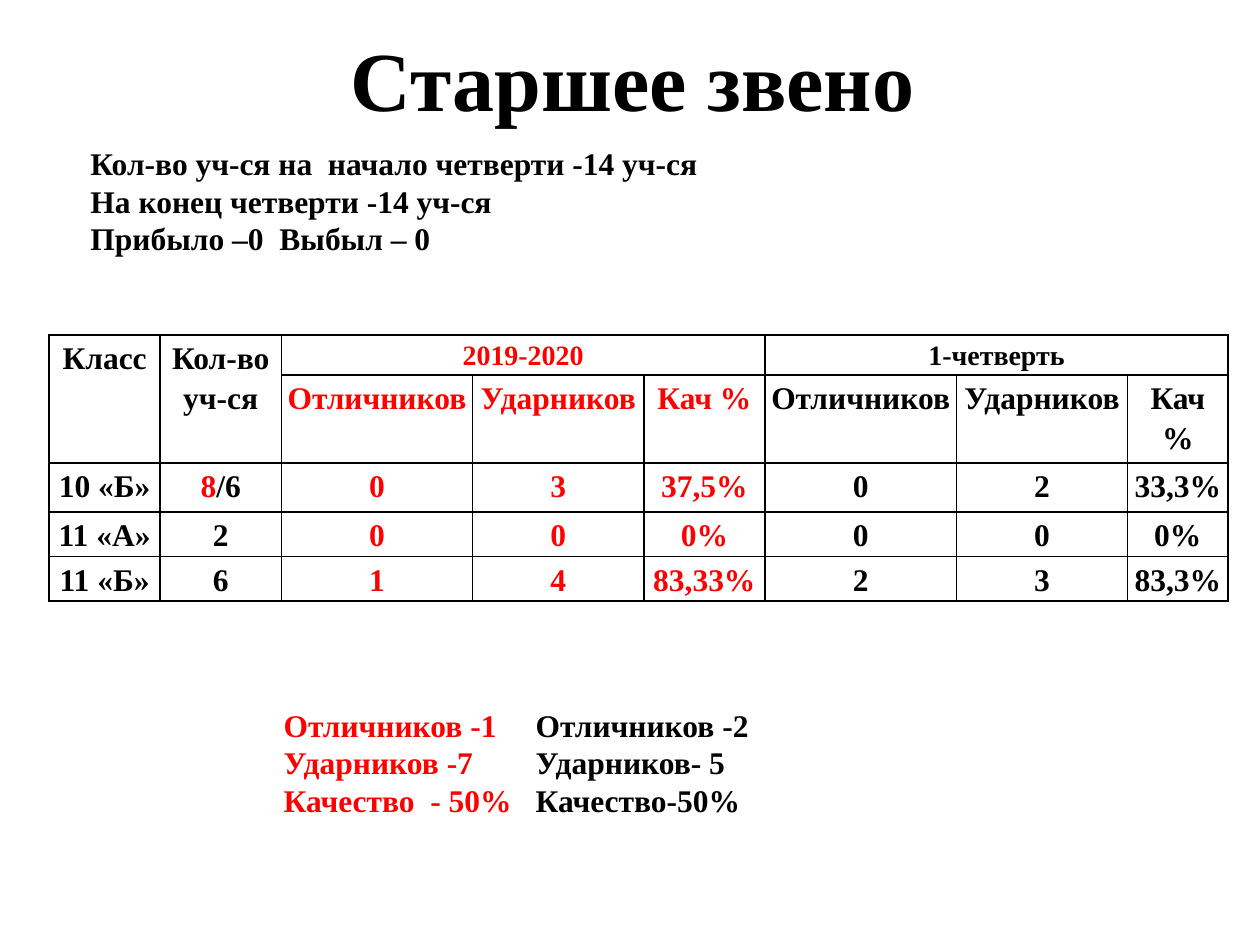
from lxml import etree
from pptx import Presentation
from pptx.dml.color import RGBColor
from pptx.enum.text import MSO_ANCHOR, MSO_AUTO_SIZE, PP_ALIGN
from pptx.oxml.ns import qn
from pptx.util import Cm, Pt

CENTER, LEFT = PP_ALIGN.CENTER, PP_ALIGN.LEFT
TOP, MIDDLE = MSO_ANCHOR.TOP, MSO_ANCHOR.MIDDLE
NO_AUTOFIT = MSO_AUTO_SIZE.NONE

FONT = "Times New Roman"
COLORS = {"current": "000000", "previous": "FF0000", "border": "000000"}

COLUMN_WIDTHS = [2.24, 2.44, 3.86, 3.45, 2.44, 3.86, 3.45, 2.03]
ROW_HEIGHTS = [0.81, 1.77, 0.99, 0.9, 0.9]
PREVIOUS_COLUMNS = range(2, 5)

# (row, column, last row, last column, lines, size)
MERGED_HEADERS = [
    (0, 0, 1, 0, ["Класс"], 18),
    (0, 1, 1, 1, ["Кол-во", "уч-ся"], 18),
    (0, 2, 0, 4, ["2019-2020"], 16),
    (0, 5, 0, 7, ["1-четверть"], 16),
]
MEASURES = ["Отличников", "Ударников", "Кач %"]
CLASS_RESULTS = [
    ["10 «Б»", [("8", "previous"), ("/6", "current")],
     "0", "3", "37,5%", "0", "2", "33,3%"],
    ["11 «А»", "2", "0", "0", "0%", "0", "0", "0%"],
    ["11 «Б»", "6", "1", "4", "83,33%", "2", "3", "83,3%"],
]
ENROLMENT = [
    "Кол-во уч-ся на  начало четверти -14 уч-ся",
    "На конец четверти -14 уч-ся",
    "Прибыло –0\tВыбыл – 0",
]
TOTALS = [
    ("Отличников -1", "Отличников -2"),
    ("Ударников -7", "Ударников- 5"),
    ("Качество  - 50%", "Качество-50%"),
]


def write_paragraphs(frame, paragraphs, size=18, align=LEFT, spacing=1.0, tab=None):
    """Fill a frame; each paragraph is a list of (text, colour key) runs."""
    for index, runs in enumerate(paragraphs):
        paragraph = frame.paragraphs[0] if index == 0 else frame.add_paragraph()
        paragraph.alignment = align
        paragraph.line_spacing = spacing
        paragraph.space_before = Pt(0)
        for text, color in runs:
            run = paragraph.add_run()
            run.text = text
            run.font.name = FONT
            run.font.size = Pt(size)
            run.font.bold = True
            run.font.color.rgb = RGBColor.from_string(COLORS[color])
        if tab is not None:
            set_plain_with_tab(paragraph, tab)


def set_plain_with_tab(paragraph, position):
    """Remove bullet and indent, then add one left tab stop."""
    properties = paragraph._p.get_or_add_pPr()
    properties.set("marL", "0")
    properties.set("indent", "0")
    etree.SubElement(properties, qn("a:buNone"))
    stops = etree.SubElement(properties, qn("a:tabLst"))
    etree.SubElement(stops, qn("a:tab"), pos=str(position), algn="l")


def place(shape, left, top, width, height, anchor=TOP):
    shape.left, shape.top = Cm(left), Cm(top)
    shape.width, shape.height = Cm(width), Cm(height)
    frame = shape.text_frame
    frame.word_wrap = True
    frame.auto_size = NO_AUTOFIT
    frame.vertical_anchor = anchor
    return frame


def add_borders(cell):
    properties = cell._tc.get_or_add_tcPr()
    for side in ("a:lnL", "a:lnR", "a:lnT", "a:lnB"):
        line = etree.SubElement(properties, qn(side), w=str(Pt(1)))
        fill = etree.SubElement(line, qn("a:solidFill"))
        etree.SubElement(fill, qn("a:srgbClr"), val=COLORS["border"])


def write_cell(cell, paragraphs, size=18):
    write_paragraphs(cell.text_frame, paragraphs, size, CENTER, 1.15)


def column_color(column):
    return "previous" if column in PREVIOUS_COLUMNS else "current"


def add_results_table(slide):
    table = slide.shapes.add_table(
        len(ROW_HEIGHTS), len(COLUMN_WIDTHS), Cm(0.99), Cm(6.75),
        Cm(sum(COLUMN_WIDTHS)), Cm(sum(ROW_HEIGHTS))).table
    table.first_row = table.horz_banding = False
    for column, width in zip(table.columns, COLUMN_WIDTHS):
        column.width = Cm(width)
    for row, height in zip(table.rows, ROW_HEIGHTS):
        row.height = Cm(height)
    for cell in table.iter_cells():
        cell.margin_left = cell.margin_right = Cm(0.08)
        cell.margin_top, cell.margin_bottom = Cm(0.03), Cm(0)
        add_borders(cell)
        cell.fill.background()

    for row, column, last_row, last_column, lines, size in MERGED_HEADERS:
        header = table.cell(row, column)
        header.merge(table.cell(last_row, last_column))
        write_cell(header, [[(line, column_color(column))] for line in lines], size)
    for column, measure in enumerate(MEASURES * 2, start=2):
        write_cell(table.cell(1, column), [[(measure, column_color(column))]])
    for row, results in enumerate(CLASS_RESULTS, start=2):
        for column, result in enumerate(results):
            runs = [(result, column_color(column))] if isinstance(result, str) else result
            write_cell(table.cell(row, column), [runs])


def add_totals(slide):
    box = slide.shapes.add_textbox(0, 0, 0, 0)
    frame = place(box, 2.77, 14.1, 21.44, 3.33)
    frame.margin_left = Cm(2.95)
    paragraphs = [[(previous + "\t", "previous"), (current, "current")]
                  for previous, current in TOTALS]
    write_paragraphs(frame, paragraphs, tab=Cm(10.35))


def main():
    presentation = Presentation()
    presentation.slide_width, presentation.slide_height = Cm(25.4), Cm(19.05)
    slide = presentation.slides.add_slide(presentation.slide_layouts[1])

    title = place(slide.shapes.title, 6.76, 0.41, 11.99, 2.31, MIDDLE)
    write_paragraphs(title, [[("Старшее звено", "current")]], 48, CENTER)
    enrolment = place(slide.placeholders[1], 1.57, 2.77, 20.04, 3.33)
    write_paragraphs(enrolment, [[(line, "current")] for line in ENROLMENT],
                     tab=Cm(10.49))
    add_results_table(slide)
    add_totals(slide)
    presentation.save("out.pptx")


if __name__ == "__main__":
    main()
